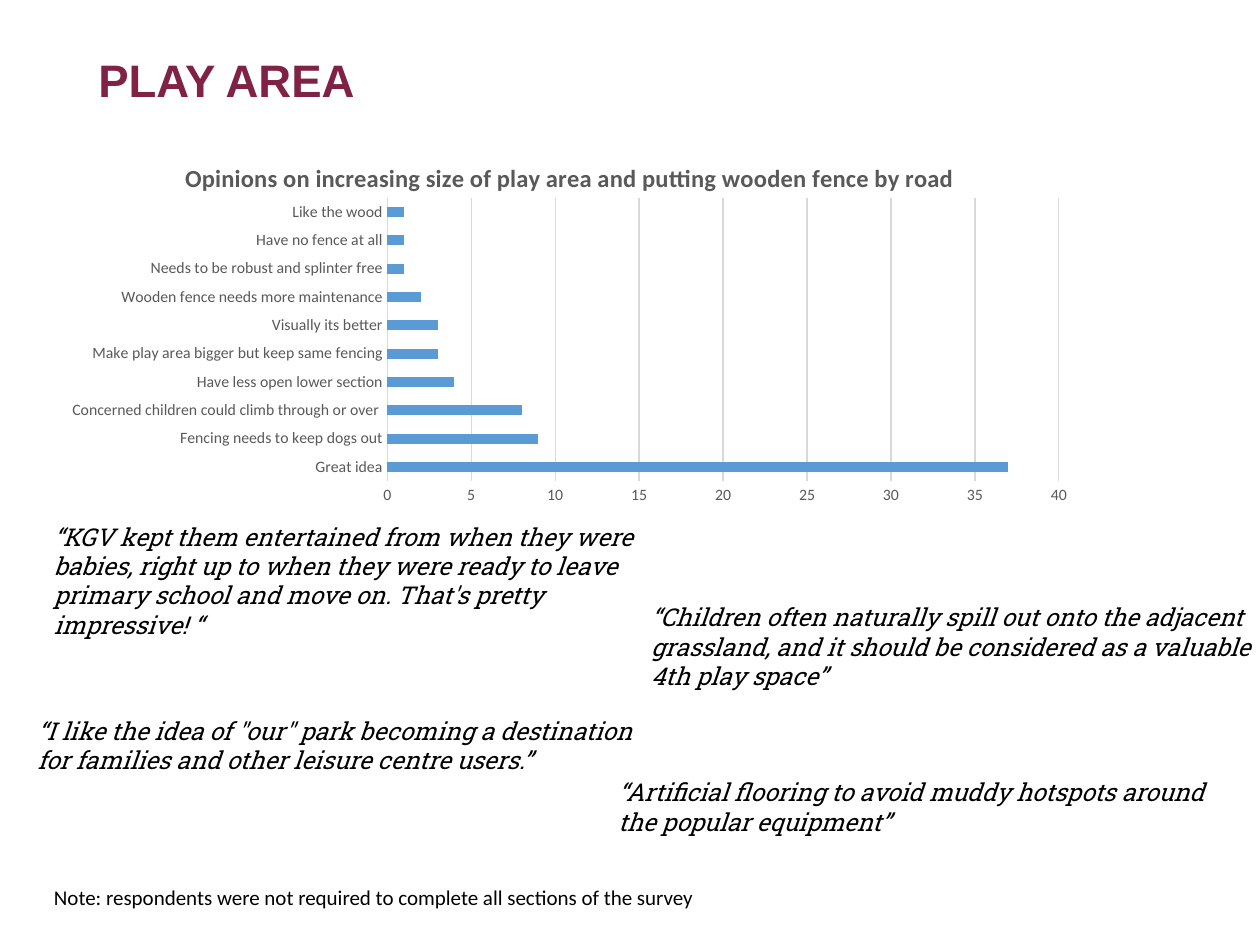
"""Builds the play area survey slide with a bar chart and quotes."""
from lxml.etree import SubElement
from pptx import Presentation
from pptx.chart.data import CategoryChartData
from pptx.dml.color import RGBColor
from pptx.enum.chart import XL_CHART_TYPE, XL_TICK_MARK
from pptx.enum.text import MSO_ANCHOR
from pptx.oxml.ns import qn
from pptx.util import Inches, Pt

PLUM = RGBColor(0x80, 0x22, 0x45)
BLACK = RGBColor(0, 0, 0)
GREY = RGBColor(0x59, 0x59, 0x59)
PALE = RGBColor(0xD9, 0xD9, 0xD9)
BLUE = RGBColor(0x5B, 0x9B, 0xD5)


def write(frame, text, size=14, face="Roboto Slab", color=BLACK, bold=False, italic=False):
    frame.word_wrap = True
    run = frame.paragraphs[0].add_run()
    run.text = text
    font = run.font
    font.size, font.name = Pt(size), face
    font.bold, font.italic = bold, italic
    font.color.rgb = color


def place(parent, **spots):
    layout = parent.find(qn("c:layout"))
    if layout is None:
        layout = SubElement(parent, qn("c:layout"))
        parent.insert(1, layout)
    for old in list(layout):
        layout.remove(old)
    manual = SubElement(layout, qn("c:manualLayout"))
    for tag, value in spots.items():
        SubElement(manual, qn(f"c:{tag}")).set("val", str(value))


deck = Presentation()
deck.slide_width, deck.slide_height = Inches(10), Inches(7.5)
slide = deck.slides.add_slide(deck.slide_layouts[5])

title = slide.shapes.title
title.left, title.top = Inches(0.68), Inches(0.36)
title.width, title.height = Inches(8.62), Inches(0.54)
frame = title.text_frame
frame.vertical_anchor = MSO_ANCHOR.BOTTOM
write(frame, "PLAY AREA", size=26, face="Arial", color=PLUM, bold=True)
frame.paragraphs[0].line_spacing = 0.9
frame.paragraphs[0].alignment = 1

counts = {
    "Great idea": 37,
    "Fencing needs to keep dogs out": 9,
    "Concerned children could climb through or over ": 8,
    "Have less open lower section": 4,
    "Make play area bigger but keep same fencing": 3,
    "Visually its better": 3,
    "Wooden fence needs more maintenance": 2,
    "Needs to be robust and splinter free": 1,
    "Have no fence at all": 1,
    "Like the wood": 1,
}
data = CategoryChartData()
data.categories = list(counts)
data.add_series("Series 1", list(counts.values()))
chart = slide.shapes.add_chart(
    XL_CHART_TYPE.BAR_CLUSTERED, Inches(0.45), Inches(1.06), Inches(8.2), Inches(3), data
).chart
chart.font.size, chart.font.name = Pt(10), "Calibri"
chart.has_legend = False
chart.has_title = True
head = chart.chart_title
write(
    head.text_frame,
    "Opinions on increasing size of play area and putting wooden fence by road",
    face="Calibri", color=GREY, bold=True,
)
head.include_in_layout = False

plot = chart.plots[0]
plot.gap_width = 182
plot.vary_by_categories = False
bars = plot.series[0].format.fill
bars.solid()
bars.fore_color.rgb = BLUE

for axis in (chart.category_axis, chart.value_axis):
    axis.major_tick_mark = axis.minor_tick_mark = XL_TICK_MARK.NONE
    font = axis.tick_labels.font
    font.size, font.name = Pt(9), "Calibri"
    font.color.rgb = GREY
axis.minimum_scale, axis.maximum_scale, axis.major_unit = 0, 40, 5
axis.format.line.fill.background()
for line in (chart.category_axis.format.line, axis.major_gridlines.format.line):
    line.color.rgb = PALE
    line.width = Pt(0.75)

place(head._element, xMode="edge", yMode="edge", x=0.12, y=0.06)
area = chart._chartSpace.chart.plotArea
place(area, layoutTarget="inner", xMode="edge", yMode="edge", x=0.32, y=0.17, w=0.65, h=0.75)

quotes = [
    (0.33, 4.09, 1.04, "“KGV kept them entertained from when they were babies, right up to when they "
     "were ready to leave primary school and move on. That's pretty impressive! “"),
    (5.07, 4.73, 0.81, "“Children often naturally spill out onto the adjacent grassland, and it "
     "should be considered as a valuable 4th play space”"),
    (0.2, 5.63, 0.57, "“I like the idea of \"our\" park becoming a destination for families and "
     "other leisure centre users.”"),
    (4.81, 6.12, 0.57, "“Artificial flooring to avoid muddy hotspots around the popular equipment”"),
]
for left, top, height, text in quotes:
    box = slide.shapes.add_textbox(Inches(left), Inches(top), Inches(5), Inches(height))
    write(box.text_frame, text, italic=True)

note = slide.shapes.add_textbox(Inches(0.33), Inches(6.97), Inches(7.87), Inches(0.3))
write(
    note.text_frame,
    "Note: respondents were not required to complete all sections of the survey",
    size=12, face="Calibri",
)

deck.save("out.pptx")
